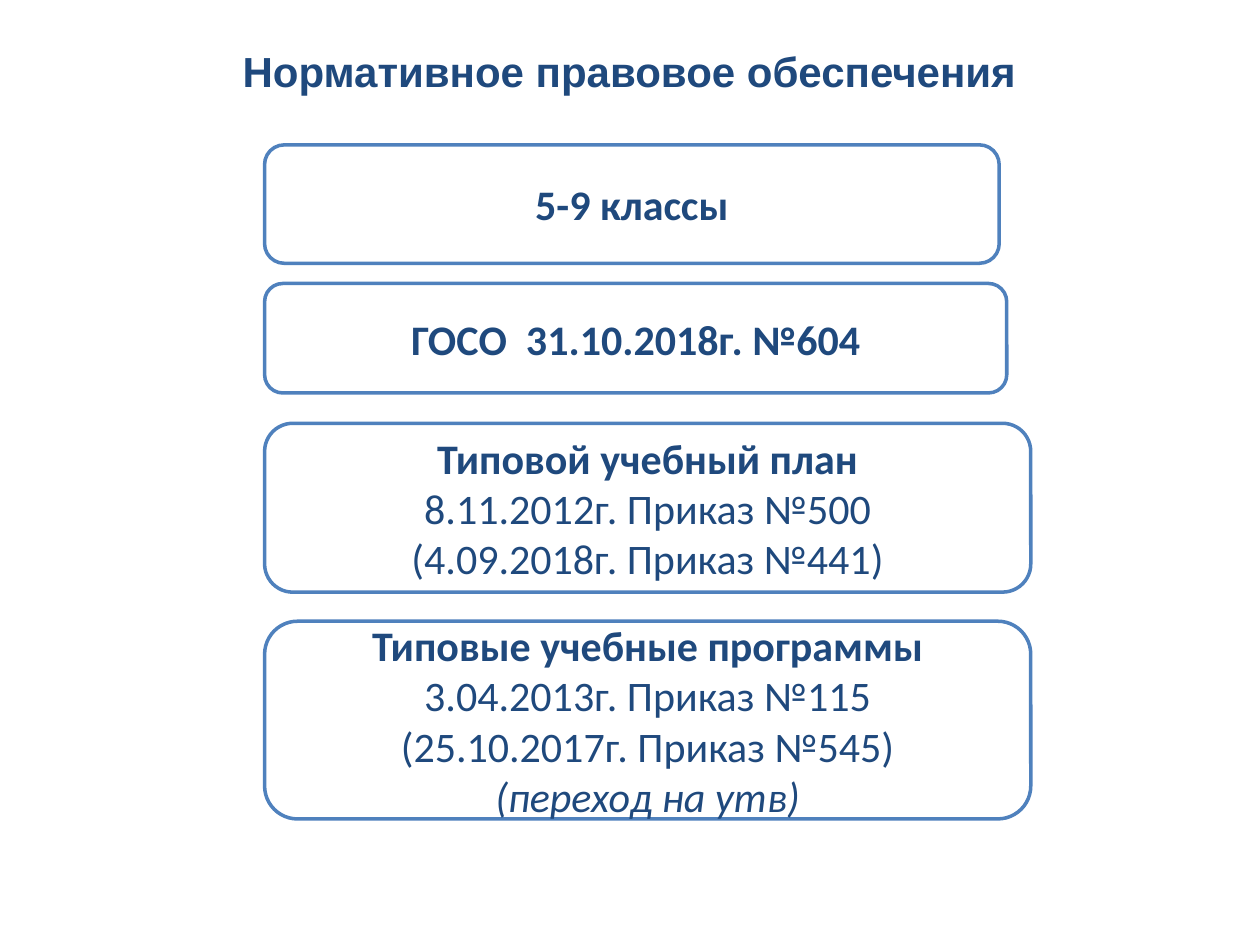
"""Builds a slide listing the regulations for grades 5-9 as stacked boxes."""
from pptx import Presentation
from pptx.dml.color import RGBColor
from pptx.enum.shapes import MSO_SHAPE
from pptx.enum.text import MSO_ANCHOR, PP_ALIGN
from pptx.util import Pt

NAVY = RGBColor(0x1F, 0x49, 0x7D)
BLUE = RGBColor(0x4F, 0x81, 0xBD)
WHITE = RGBColor(0xFF, 0xFF, 0xFF)

TITLE = "Нормативное правовое обеспечения"
BOX_LEFT = 151.2
REGULATIONS = [
    (82.8, 419.8, 67.7, ["5-9 классы"], None),
    (162, 424.1, 62.6, ["ГОСО  31.10.2018г. №604"], None),
    (241.9, 437.8, 96.5, ["Типовой учебный план", "8.11.2012г. Приказ №500",
                          "(4.09.2018г. Приказ №441)"], None),
    (355, 437.8, 113, ["Типовые учебные программы", "3.04.2013г. Приказ №115",
                       "(25.10.2017г. Приказ №545)"], "(переход на утв)"),
]


def add_line(paragraph, wording, font_name, bold=False, italic=False):
    """Adds one centred run to the paragraph."""
    paragraph.alignment = PP_ALIGN.CENTER
    run = paragraph.add_run()
    run.text = wording
    run.font.name = font_name
    run.font.size = Pt(24)
    run.font.bold = bold
    run.font.italic = italic
    run.font.color.rgb = NAVY


def add_regulation(slide, top, width, height, lines, remark):
    """Draws a rounded box with a bold heading, its orders and a remark."""
    box = slide.shapes.add_shape(MSO_SHAPE.ROUNDED_RECTANGLE, Pt(BOX_LEFT),
                                 Pt(top), Pt(width), Pt(height))
    box.shadow.inherit = False
    box.fill.solid()
    box.fill.fore_color.rgb = WHITE
    box.line.color.rgb = BLUE
    box.line.width = Pt(2)
    frame = box.text_frame
    frame.word_wrap = True
    frame.vertical_anchor = MSO_ANCHOR.MIDDLE
    heading, *orders = lines
    add_line(frame.paragraphs[0], heading, "Calibri", bold=True)
    for order in orders:
        add_line(frame.add_paragraph(), order, "Calibri")
    if remark:
        add_line(frame.add_paragraph(), remark, "Calibri", italic=True)


def main():
    """Builds and saves the slide."""
    deck = Presentation()
    deck.slide_width, deck.slide_height = Pt(720), Pt(540)
    slide = deck.slides.add_slide(deck.slide_layouts[5])
    title = slide.shapes.title
    title.left, title.top = Pt(115.9), Pt(15.1)
    title.width, title.height = Pt(487.4), Pt(51.1)
    title.text_frame.vertical_anchor = MSO_ANCHOR.MIDDLE
    add_line(title.text_frame.paragraphs[0], TITLE, "Arial", bold=True)
    for regulation in REGULATIONS:
        add_regulation(slide, *regulation)
    deck.save("out.pptx")


if __name__ == "__main__":
    main()
